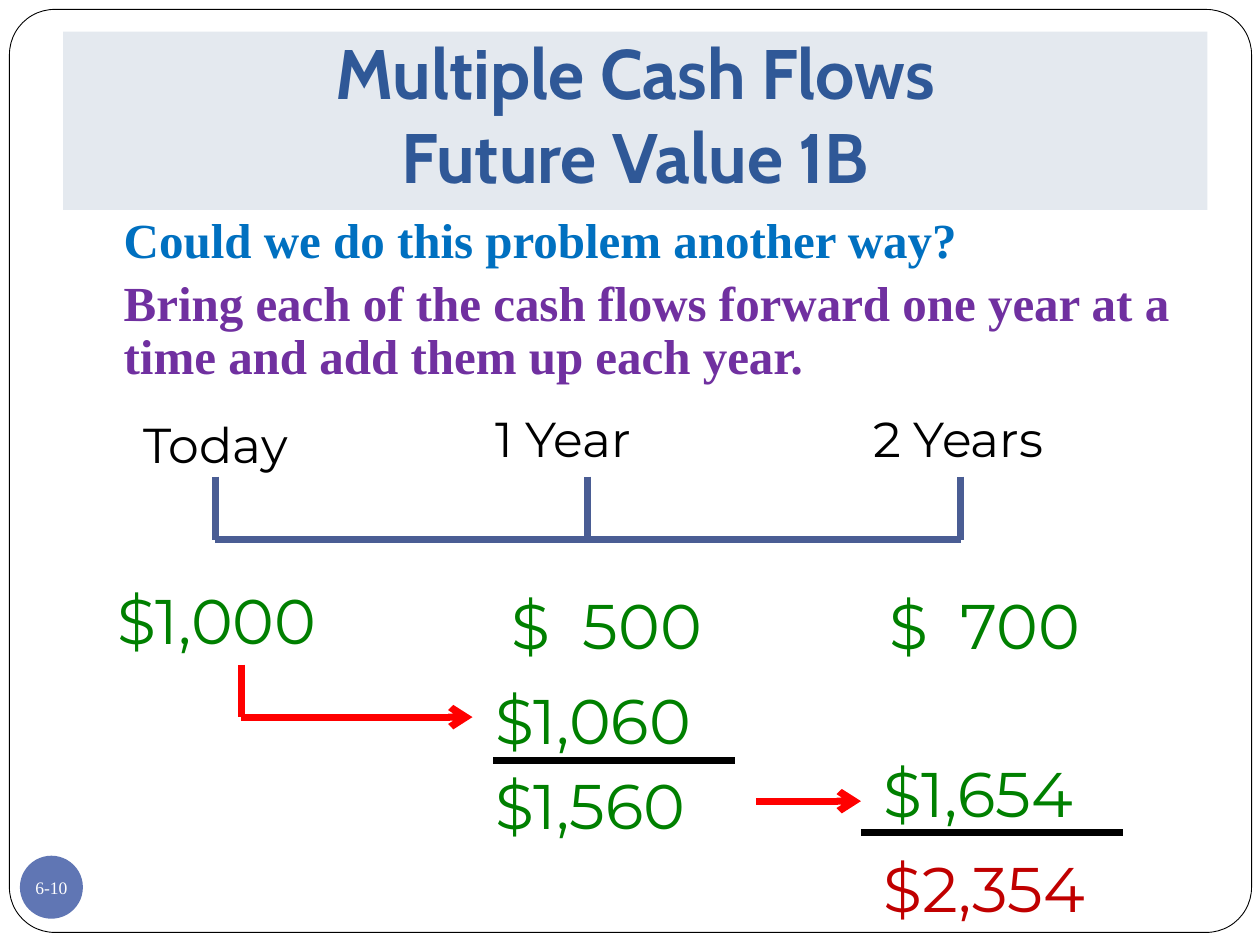
"""Build the slide on future value of multiple cash flows."""
from typing import NamedTuple

from lxml import etree
from pptx import Presentation
from pptx.dml.color import RGBColor
from pptx.enum.shapes import MSO_CONNECTOR, MSO_SHAPE
from pptx.enum.text import MSO_ANCHOR, MSO_AUTO_SIZE, PP_ALIGN
from pptx.oxml.ns import qn
from pptx.util import Inches, Pt

STRAIGHT = MSO_CONNECTOR.STRAIGHT
OVAL, ROUNDED = MSO_SHAPE.OVAL, MSO_SHAPE.ROUNDED_RECTANGLE
MIDDLE, BOTTOM = MSO_ANCHOR.MIDDLE, MSO_ANCHOR.BOTTOM
CENTER, NO_AUTOFIT = PP_ALIGN.CENTER, MSO_AUTO_SIZE.NONE

COLUMNS, ROWS = 120, 90
SLIDE_WIDTH, SLIDE_HEIGHT = Inches(10), Inches(7.5)
WHITE, BLACK, RED, GREEN = "FFFFFF", "000000", "FF0000", "008000"
DARK_RED, NAVY, SLATE = "C00000", "2F5897", "4A5D94"
SERIF, SANS, HEADING = "Times New Roman", "Montserrat", "Cabin"
AXIS_ROW, TICK_ROWS = 51.4, 6
TICK_COLUMNS = (20.5, 56, 91.5)


class Label(NamedTuple):
    text: str
    column: float
    row: float
    columns: float
    size: int = 36
    color: str = GREEN


class Line(NamedTuple):
    start: tuple[float, float]
    end: tuple[float, float]
    color: str
    arrow: bool = False


LABELS = (
    Label("Today", 12.5, 38.9, 18, 28, BLACK),
    Label("1 Year", 46, 38.3, 21, 28, BLACK),
    Label("2 Years", 82, 38.3, 23, 28, BLACK),
    Label("$1,000", 10, 54.8, 26.5),
    Label("$  500", 47.5, 55.3, 23),
    Label("$  700", 83.5, 55.3, 26.5),
    Label("$1,060", 46, 64.3, 24.4),
    Label("$1,560", 46, 72.4, 29),
    Label("$1,654", 83, 71.3, 24.4),
    Label("$2,354", 83, 80.3, 29, color=DARK_RED),
)

LINES = (
    Line((TICK_COLUMNS[0], AXIS_ROW), (TICK_COLUMNS[-1], AXIS_ROW), SLATE),
    *(Line((column, AXIS_ROW - TICK_ROWS), (column, AXIS_ROW), SLATE) for column in TICK_COLUMNS),
    Line((23, 63.3), (23, 68.3), RED),
    Line((23, 68.3), (45, 68.3), RED, arrow=True),
    Line((72, 76.3), (82, 76.3), RED, arrow=True),
    Line((47, 72.4), (70, 72.4), BLACK),
    Line((82, 79.3), (107, 79.3), BLACK),
)

EXPLANATION = (
    ("Could we do this problem another way?", "0070C0"),
    ("Bring each of the cash flows forward one year at a time and add them up each year.", "7030A0"),
)


def x(columns: float) -> int:
    """Convert grid columns to a length."""
    return round(SLIDE_WIDTH * columns / COLUMNS)


def y(rows: float) -> int:
    """Convert grid rows to a length."""
    return round(SLIDE_HEIGHT * rows / ROWS)


def rgb(color: str) -> RGBColor:
    """Convert a hex string to a colour."""
    return RGBColor.from_string(color)


def style(paragraph, font: str, size: int, color: str, bold: bool = False) -> None:
    """Set the font of a paragraph."""
    paragraph.font.name = font
    paragraph.font.size = Pt(size)
    paragraph.font.bold = bold
    paragraph.font.color.rgb = rgb(color)


def add_preset(slide, preset, column: float, row: float, columns: float, rows: float, fill: str):
    """Add a filled preset shape without a shadow."""
    shape = slide.shapes.add_shape(preset, x(column), y(row), x(columns), y(rows))
    shape.shadow.inherit = False
    shape.fill.solid()
    shape.fill.fore_color.rgb = rgb(fill)
    return shape


def add_frame(slide) -> None:
    """Add the rounded border behind everything else."""
    frame = add_preset(slide, ROUNDED, 0.9, 0.9, 118.3, 87.9, WHITE)
    frame.adjustments[0] = 0.049
    frame.line.color.rgb = rgb(BLACK)
    frame.line.width = Pt(0.5)
    slide.shapes.title.element.addprevious(frame.element)


def add_page_number(slide) -> None:
    """Add the page number in its disc."""
    disc = add_preset(slide, OVAL, 1.9, 81.5, 6, 6, "6076B4")
    disc.line.fill.background()
    frame = disc.text_frame
    frame.margin_left = frame.margin_right = frame.margin_top = frame.margin_bottom = 0
    frame.word_wrap = False
    frame.vertical_anchor = MIDDLE
    frame.text = "6-10"
    frame.paragraphs[0].alignment = CENTER
    style(frame.paragraphs[0], SERIF, 10, WHITE)


def set_title(slide) -> None:
    """Place and format the title."""
    title = slide.shapes.title
    title.left, title.top, title.width, title.height = x(6), y(3), x(109), y(17)
    title.fill.solid()
    title.fill.fore_color.rgb = rgb("E4E9EF")
    frame = title.text_frame
    frame.text = "Multiple Cash Flows\vFuture Value 1B"
    frame.auto_size = NO_AUTOFIT
    frame.vertical_anchor = BOTTOM
    frame.margin_bottom = Inches(0.1)
    frame.paragraphs[0].alignment = CENTER
    style(frame.paragraphs[0], HEADING, 40, NAVY, bold=True)


def add_text_frame(slide, column: float, row: float, columns: float, rows: float):
    """Add a wrapping text box and return its text frame."""
    frame = slide.shapes.add_textbox(x(column), y(row), x(columns), y(rows)).text_frame
    frame.word_wrap = True
    return frame


def add_label(slide, label: Label) -> None:
    """Add a date or an amount."""
    rows = 8.4 if label.size == 36 else 6.8
    frame = add_text_frame(slide, label.column, label.row, label.columns, rows)
    frame.text = label.text
    style(frame.paragraphs[0], SANS, label.size, label.color)


def add_line(slide, line: Line) -> None:
    """Add a straight line, with an arrowhead at its end if wanted."""
    (x1, y1), (x2, y2) = line.start, line.end
    connector = slide.shapes.add_connector(STRAIGHT, x(x1), y(y1), x(x2), y(y2))
    connector.line.color.rgb = rgb(line.color)
    connector.line.width = Pt(4)
    properties = connector.element.spPr
    if line.arrow:
        etree.SubElement(properties.find(qn("a:ln")), qn("a:tailEnd"), type="arrow")
    etree.SubElement(properties, qn("a:effectLst"))


def add_explanation(slide) -> None:
    """Add the question and its answer under the title."""
    frame = add_text_frame(slide, 10.6, 20, 107.4, 59.4)
    frame.text = "\n".join(text for text, _ in EXPLANATION)
    for paragraph, (_, color) in zip(frame.paragraphs, EXPLANATION):
        paragraph.line_spacing = 0.9
        paragraph.space_before = Pt(5.8)
        style(paragraph, SERIF, 28, color, bold=True)


def main() -> None:
    """Build and save the presentation."""
    presentation = Presentation()
    presentation.slide_width, presentation.slide_height = SLIDE_WIDTH, SLIDE_HEIGHT
    slide = presentation.slides.add_slide(presentation.slide_layouts.get_by_name("Title Only"))
    add_frame(slide)
    add_page_number(slide)
    set_title(slide)
    for line in LINES:
        add_line(slide, line)
    for label in LABELS:
        add_label(slide, label)
    add_explanation(slide)
    presentation.save("out.pptx")


if __name__ == "__main__":
    main()
